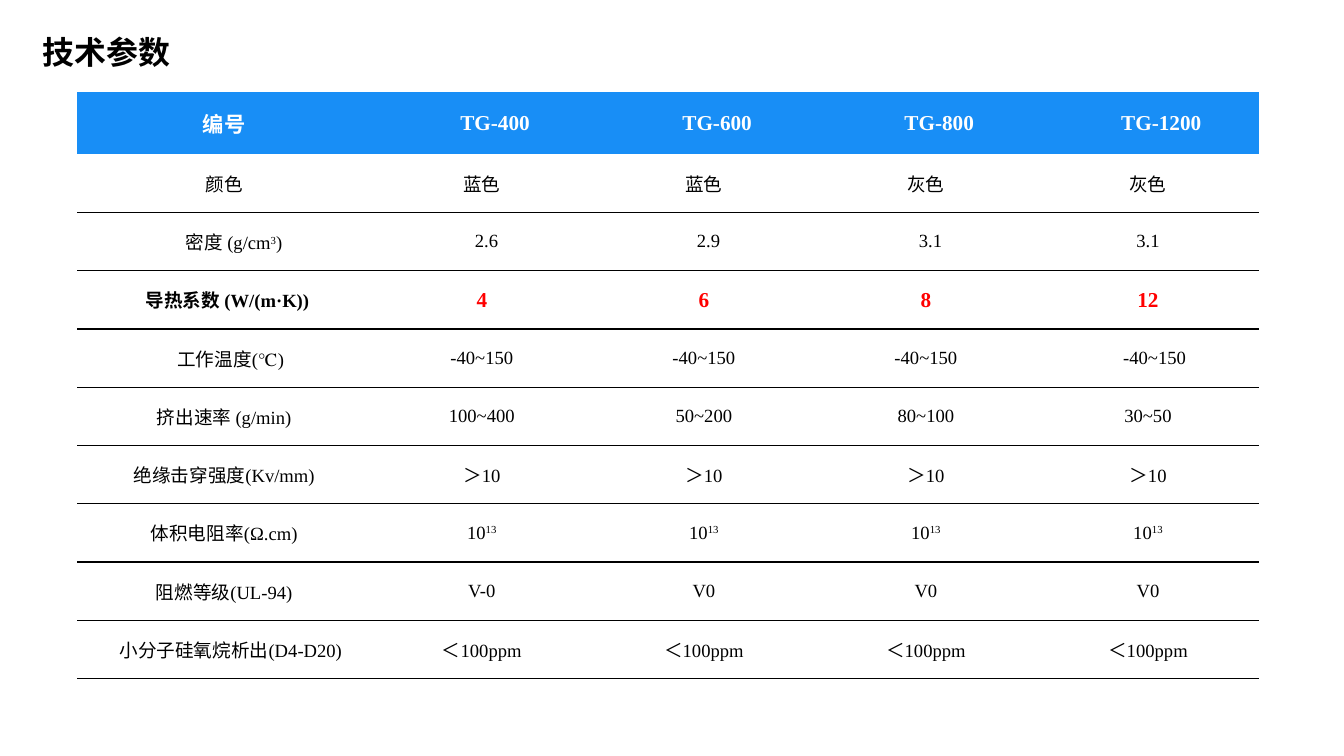
from lxml.etree import SubElement
from pptx import Presentation
from pptx.dml.color import RGBColor
from pptx.enum.text import MSO_ANCHOR as Anchor, MSO_AUTO_SIZE as AutoSize, PP_ALIGN as Align
from pptx.oxml import parse_xml
from pptx.oxml.ns import nsdecls, qn
from pptx.util import Pt

BLACK = RGBColor(0x00, 0x00, 0x00)
WHITE = RGBColor(0xFF, 0xFF, 0xFF)
BLUE = RGBColor(0x18, 0x8E, 0xF6)
RED = RGBColor(0xFF, 0x00, 0x00)
CJK_FONT = "Noto Sans CJK SC"
LATIN_FONT = "Times New Roman"
PLAIN_STYLE = "{2D5ABB26-0587-4C30-8999-92F81FD0307C}"

HEADER = ["编号", "TG-400", "TG-600", "TG-800", "TG-1200"]
KEY_LABEL = "导热系数 (W/(m·K))"
BODY = [
    ["颜色", "蓝色", "蓝色", "灰色", "灰色"],
    ["密度 (g/cm^3^)", "2.6", "2.9", "3.1", "3.1"],
    [KEY_LABEL, "4", "6", "8", "12"],
    ["工作温度(℃)"] + ["-40~150"] * 4,
    ["挤出速率 (g/min)", "100~400", "50~200", "80~100", "30~50"],
    ["绝缘击穿强度(Kv/mm)"] + ["＞10"] * 4,
    ["体积电阻率(Ω.cm)"] + ["10^13^"] * 4,
    ["阻燃等级(UL-94)", "V-0", "V0", "V0", "V0"],
    ["小分子硅氧烷析出(D4-D20)"] + ["＜100ppm"] * 4,
]
HEADER_INDENTS = [0, 20, 20, 20, 20]
BODY_INDENTS = {
    1: [15, 7, 7, 7, 0],
    2: [5, 0, 0, 0, 0],
    3: [10, 0, 0, 0, 10],
    8: [10, 0, 0, 0, 0],
}


def format_paragraph(p, align, latin, size, color, bold):
    p.alignment = align
    font = p.font
    font.name, font.size, font.bold = latin, Pt(size), bold
    font.color.rgb = color
    props = p._p.get_or_add_pPr().find(qn("a:defRPr"))
    SubElement(props, qn("a:ea")).set("typeface", CJK_FONT)


def add_runs(p, text):
    for i, part in enumerate(text.split("^")):
        if part:
            r = p.add_run()
            r.text = part
            if i % 2:
                r._r.get_or_add_rPr().set("baseline", "30000")


def fill_cell(cell, text, size, color, bold, indent):
    cell.margin_left = cell.margin_right = cell.margin_top = cell.margin_bottom = 0
    cell.vertical_anchor = Anchor.MIDDLE
    p = cell.text_frame.paragraphs[0]
    add_runs(p, text)
    p._p.get_or_add_pPr().set("marL", str(Pt(indent)))
    format_paragraph(p, Align.CENTER, LATIN_FONT, size, color, bold)


def rule_below(cell):
    line = parse_xml(
        f'<a:lnB {nsdecls("a")} w="{Pt(1)}"><a:solidFill>'
        f'<a:srgbClr val="{BLACK}"/></a:solidFill></a:lnB>'
    )
    cell._tc.get_or_add_tcPr().insert(0, line)


def add_title(s, x, y, w, h):
    sp = s.shapes.title
    sp.left, sp.top, sp.width, sp.height = Pt(x), Pt(y), Pt(w), Pt(h)
    tf = sp.text_frame
    tf.text = "技术参数"
    tf.word_wrap = False
    tf.auto_size = AutoSize.NONE
    tf.vertical_anchor = Anchor.MIDDLE
    format_paragraph(tf.paragraphs[0], Align.LEFT, CJK_FONT, 24, BLACK, True)


def add_parameters(s, x, y, w, h, label_w=221, header_h=47):
    rows, cols = len(BODY) + 1, len(HEADER)
    frame = s.shapes.add_table(rows, cols, Pt(x), Pt(y), Pt(w), Pt(h))
    table = frame.table
    table._tbl.tblPr.find(qn("a:tableStyleId")).text = PLAIN_STYLE
    table.horz_banding = False

    for j, col in enumerate(table.columns):
        col.width = Pt((w - label_w) / (cols - 1) if j else label_w)
    for i, row in enumerate(table.rows):
        row.height = Pt((h - header_h) / (rows - 1) if i else header_h)

    for j, text in enumerate(HEADER):
        cell = table.cell(0, j)
        fill_cell(cell, text, 16, WHITE, True, HEADER_INDENTS[j])
        cell.fill.solid()
        cell.fill.fore_color.rgb = BLUE

    for i, texts in enumerate(BODY):
        key = texts[0] == KEY_LABEL
        indents = BODY_INDENTS.get(i, [0] * cols)
        for j, text in enumerate(texts):
            cell = table.cell(i + 1, j)
            size, color = (16, RED) if key and j else (14, BLACK)
            fill_cell(cell, text, size, color, key, indents[j])
            cell.fill.background()
            rule_below(cell)


def main():
    prs = Presentation()
    prs.slide_width, prs.slide_height = Pt(1012.32), Pt(569.52)
    s = prs.slides.add_slide(prs.slide_layouts[5])
    add_title(s, 25, 21, 112, 36)
    add_parameters(s, 58.3, 69.2, 890, 442)
    prs.save("out.pptx")


if __name__ == "__main__":
    main()
